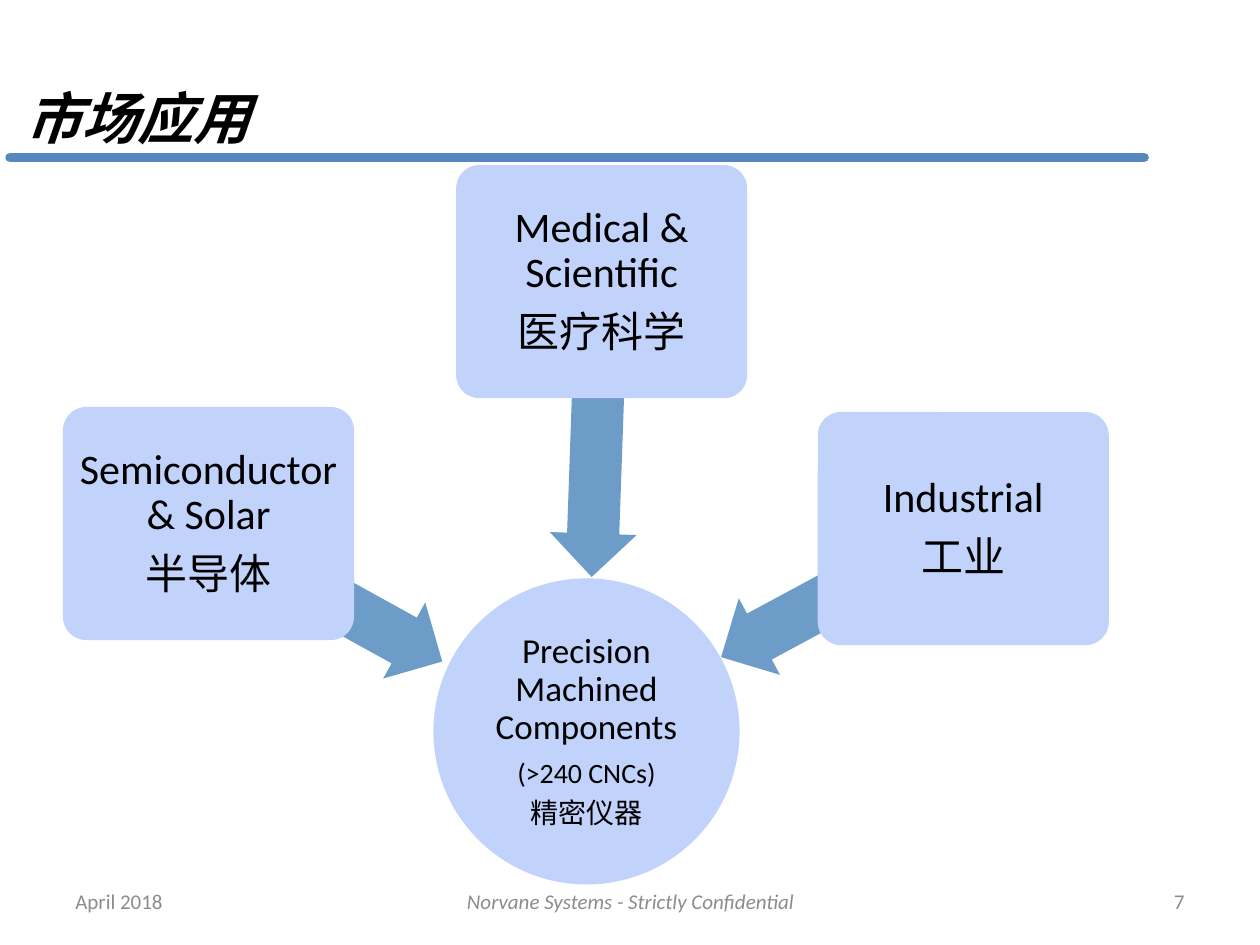
import pptx
import pptx.util
import pptx.dml.color
import pptx.enum.shapes
import pptx.enum.text
import pptx.oxml.ns
import lxml.etree

Inches = pptx.util.Inches
Pt = pptx.util.Pt
Kind = pptx.enum.shapes.MSO_SHAPE
Align = pptx.enum.text.PP_ALIGN
Anchor = pptx.enum.text.MSO_ANCHOR

PALE, BLUE, RULE = "C2D3FB", "6D9CC9", "5887C0"
BLACK, GREY = "000000", "8C8C8C"
BOX_W, BOX_H = 2.31, 1.85
ARROW_H = 0.69


def color(code):
    return pptx.dml.color.RGBColor.from_string(code)


def style(para, size, code, align, bold=False, italic=False):
    para.alignment = align
    for run in para.runs:
        font = run.font
        font.name, font.size = "Calibri", Pt(size)
        font.bold, font.italic = bold, italic
        font.color.rgb = color(code)


def add_title(slide, text):
    title = slide.shapes.title
    title.left, title.top = Inches(0), Inches(0)
    title.width, title.height = Inches(7.64), Inches(1.25)
    frame = title.text_frame
    frame.text = text
    frame.vertical_anchor = Anchor.BOTTOM
    para = frame.paragraphs[0]
    style(para, 32, BLACK, Align.LEFT, bold=True, italic=True)
    para._p.get_or_add_pPr().set("marL", str(Inches(0.1)))


def add_rule(slide):
    rule = slide.shapes.add_connector(
        pptx.enum.shapes.MSO_CONNECTOR.STRAIGHT,
        Inches(0.08), Inches(1.25), Inches(9.08), Inches(1.25))
    rule.line.color.rgb = color(RULE)
    rule.line.width = Pt(5.5)
    rule.line._get_or_add_ln().set("cap", "rnd")
    lxml.etree.SubElement(rule._element.spPr, pptx.oxml.ns.qn("a:effectLst"))


def add_foot(slide, text, left, width, align, italic=False):
    box = slide.shapes.add_textbox(
        Inches(left), Inches(6.95), Inches(width), Inches(0.4))
    frame = box.text_frame
    frame.word_wrap = True
    frame.vertical_anchor = Anchor.MIDDLE
    frame.text = text
    style(frame.paragraphs[0], 12, GREY, align, italic=italic)


def add_form(slide, kind, left, top, width, height, fill):
    form = slide.shapes.add_shape(
        kind, Inches(left), Inches(top), Inches(width), Inches(height))
    form.shadow.inherit = False
    form.fill.solid()
    form.fill.fore_color.rgb = color(fill)
    form.line.fill.background()
    return form


def add_label(form, lines, inset):
    """Fill a form with centred (text, size) lines."""
    frame = form.text_frame
    frame.word_wrap = True
    frame.vertical_anchor = Anchor.MIDDLE
    frame.margin_left = frame.margin_right = Inches(inset)
    frame.margin_top = frame.margin_bottom = Inches(inset)
    frame.text = "\n".join(text for text, size in lines)
    for para, (text, size) in zip(frame.paragraphs, lines):
        style(para, size, BLACK, Align.CENTER)
        para.line_spacing = 0.9
        para.space_after = Pt(0.35 * size)


def add_hub(slide):
    hub = add_form(slide, Kind.OVAL, 3.44, 4.59, 2.43, 2.43, PALE)
    add_label(hub, [("Precision Machined Components", 20),
                    ("(>240 CNCs)", 16), ("精密仪器", 16)], 0.01)


def add_arrow(slide, left, top, width, turn):
    arrow = add_form(slide, Kind.LEFT_ARROW, left, top, width, ARROW_H, BLUE)
    arrow.adjustments[0], arrow.adjustments[1] = 0.6, 0.5
    arrow.rotation = turn


def add_market(slide, name, local, left, top):
    box = add_form(slide, Kind.ROUNDED_RECTANGLE,
                   left, top, BOX_W, BOX_H, PALE)
    box.adjustments[0] = 0.1
    add_label(box, [(name, 24), (local, 24)], 0.05)


def main():
    deck = pptx.Presentation()
    deck.slide_width, deck.slide_height = Inches(10), Inches(7.5)
    slide = deck.slides.add_slide(deck.slide_layouts[5])

    add_rule(slide)
    add_title(slide, "市场应用")
    add_foot(slide, "April 2018", 0.5, 2.33, Align.LEFT)
    add_foot(slide, "Norvane Systems - Strictly Confidential",
             3.42, 3.17, Align.CENTER, italic=True)
    add_foot(slide, "7", 7.17, 2.33, Align.RIGHT)

    add_hub(slide)
    markets = [
        ("Semiconductor & Solar", "半导体", (0.5, 3.23), (1.55, 4.4, 2.09, 208.9)),
        ("Medical & Scientific", "医疗科学", (3.62, 1.31), (3.62, 3.12, 2.23, 272)),
        ("Industrial", "工业", (6.49, 3.27), (5.6, 4.38, 2.07, 331.7)),
    ]
    for name, local, place, arrow in markets:
        add_arrow(slide, *arrow)
        add_market(slide, name, local, *place)

    deck.save("out.pptx")


if __name__ == "__main__":
    main()
